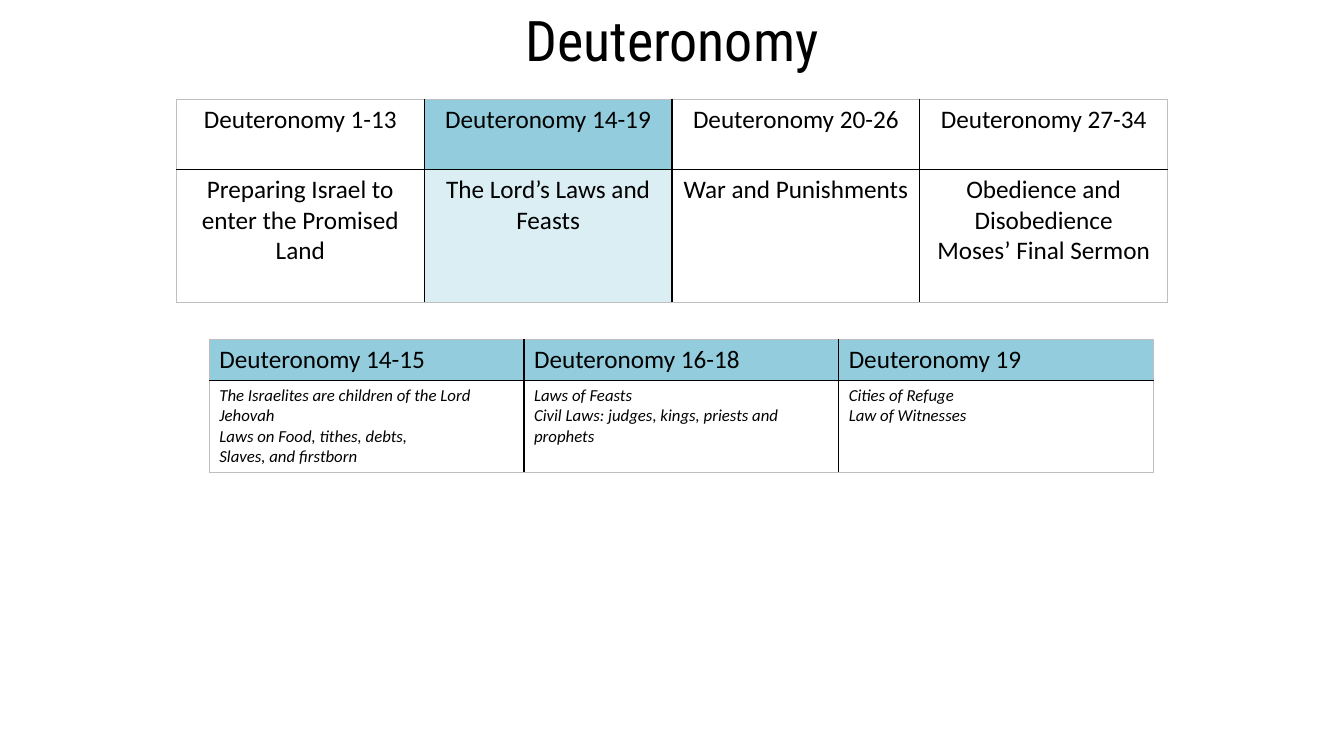
from lxml import etree
from pptx import Presentation
from pptx.dml.color import RGBColor
from pptx.enum.text import MSO_ANCHOR, MSO_AUTO_SIZE, PP_ALIGN
from pptx.oxml.ns import qn
from pptx.util import Pt

CENTER, LEFT = PP_ALIGN.CENTER, PP_ALIGN.LEFT
TOP = MSO_ANCHOR.TOP
GROW = MSO_AUTO_SIZE.SHAPE_TO_FIT_TEXT

BLACK = RGBColor(0x00, 0x00, 0x00)
WHITE = RGBColor(0xFF, 0xFF, 0xFF)
GRAY = RGBColor(0xBF, 0xBF, 0xBF)
BLUE = RGBColor(0x93, 0xCD, 0xDD)
PALE_BLUE = RGBColor(0xDB, 0xEE, 0xF4)

SECTIONS = [
    [["Deuteronomy 1-13"], ["Deuteronomy 14-19"],
     ["Deuteronomy 20-26"], ["Deuteronomy 27-34"]],
    [["Preparing Israel to enter the Promised Land"],
     ["The Lord’s Laws and Feasts"],
     ["War and Punishments"],
     ["Obedience and Disobedience", "Moses’ Final Sermon"]],
]
SECTION_FILLS = [[WHITE, BLUE, WHITE, WHITE], [WHITE, PALE_BLUE, WHITE, WHITE]]

CHAPTERS = [
    [["Deuteronomy 14-15"], ["Deuteronomy 16-18"], ["Deuteronomy 19"]],
    [["The Israelites are children of the Lord Jehovah",
      "Laws on Food, tithes, debts,", "Slaves, and firstborn"],
     ["Laws of Feasts", "Civil Laws: judges, kings, priests and prophets"],
     ["Cities of Refuge", "Law of Witnesses"]],
]
CHAPTER_FILLS = [[BLUE] * 3, [WHITE] * 3]


def add_text(tf, lines, font, size, align, italic=False):
    for i, line in enumerate(lines):
        p = tf.paragraphs[0] if i == 0 else tf.add_paragraph()
        p.alignment = align
        r = p.add_run()
        r.text = line
        r.font.name = font
        r.font.size = Pt(size)
        r.font.italic = italic
        r.font.color.rgb = BLACK


def set_border(cell, side, outer):
    color, width = (GRAY, 0.5) if outer else (BLACK, 1)
    tc_pr = cell._tc.get_or_add_tcPr()
    ln = etree.SubElement(tc_pr, qn(f"a:ln{side}"), w=str(Pt(width)))
    fill = etree.SubElement(ln, qn("a:solidFill"))
    etree.SubElement(fill, qn("a:srgbClr"), val=str(color))


def add_table(s, rows, fills, left, top, col_width, heights, align, body_size, italic):
    n_rows, n_cols = len(rows), len(rows[0])
    table = s.shapes.add_table(n_rows, n_cols, Pt(left), Pt(top),
                               Pt(col_width * n_cols), Pt(sum(heights))).table
    table.first_row = False
    table.horz_banding = False
    for col in table.columns:
        col.width = Pt(col_width)
    for i, row in enumerate(rows):
        table.rows[i].height = Pt(heights[i])
        for j, lines in enumerate(row):
            cell = table.cell(i, j)
            set_border(cell, "L", j == 0)
            set_border(cell, "R", j == n_cols - 1)
            set_border(cell, "T", i == 0)
            set_border(cell, "B", i == n_rows - 1)
            cell.fill.solid()
            cell.fill.fore_color.rgb = fills[i][j]
            add_text(cell.text_frame, lines, "Calibri",
                     body_size if i else 18, align, italic and i > 0)


def add_title(s, text, width):
    sp = s.shapes.title
    sp.left, sp.top, sp.width, sp.height = Pt(0), Pt(0), Pt(width), Pt(55.4)
    tf = sp.text_frame
    tf.word_wrap = True
    tf.auto_size = GROW
    tf.vertical_anchor = TOP
    add_text(tf, [text], "Roboto Condensed", 40, CENTER)


def main():
    prs = Presentation()
    prs.slide_width, prs.slide_height = Pt(960), Pt(540)
    s = prs.slides.add_slide(prs.slide_layouts[5])
    add_table(s, SECTIONS, SECTION_FILLS, 126, 71, 177, [50, 95], CENTER, 18, False)
    add_table(s, CHAPTERS, CHAPTER_FILLS, 149.5, 242.5, 224.8, [29.2, 65.6], LEFT, 12, True)
    add_title(s, "Deuteronomy", 960)
    prs.save("out.pptx")


if __name__ == "__main__":
    main()
